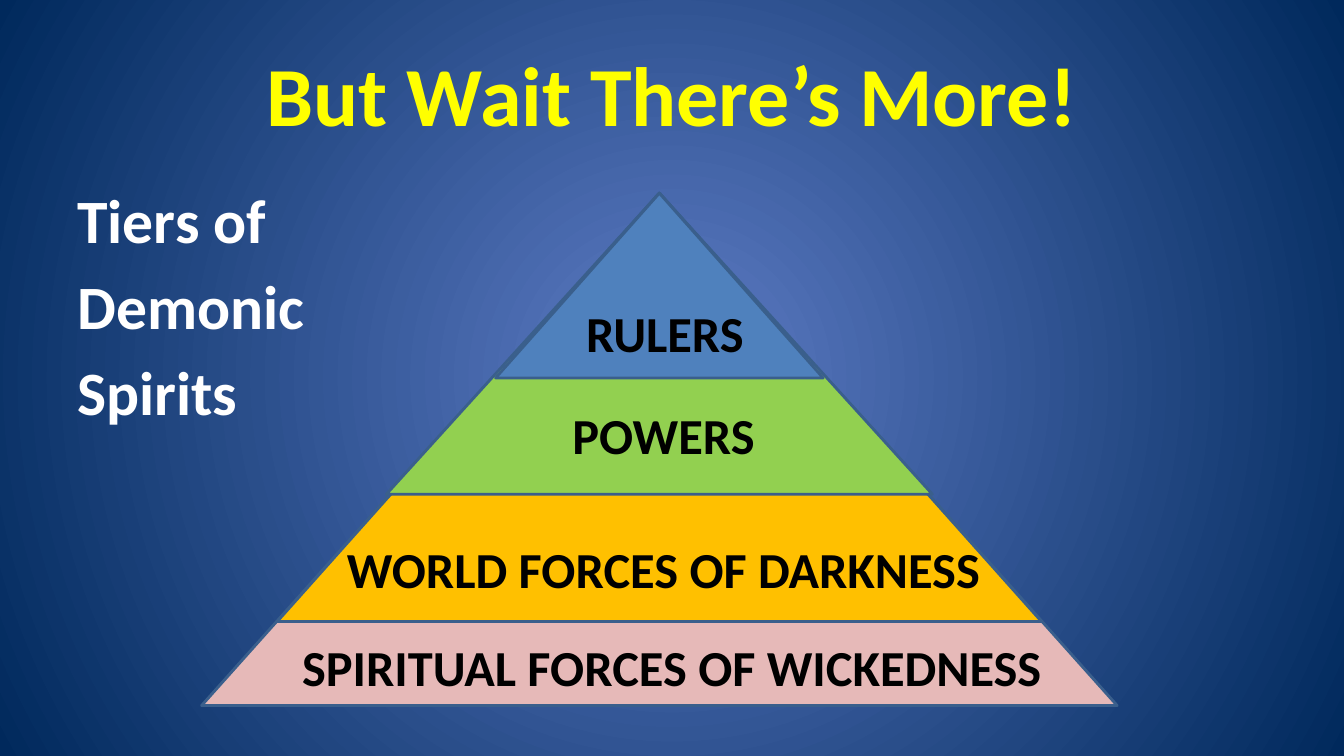
from dataclasses import dataclass

from lxml import etree
from pptx import Presentation
from pptx.dml.color import RGBColor
from pptx.enum.shapes import MSO_SHAPE
from pptx.enum.text import MSO_ANCHOR, MSO_AUTO_SIZE, PP_ALIGN
from pptx.oxml.ns import qn
from pptx.util import Pt

TRIANGLE = MSO_SHAPE.ISOSCELES_TRIANGLE
CENTER = PP_ALIGN.CENTER
LEFT = PP_ALIGN.LEFT
MIDDLE = MSO_ANCHOR.MIDDLE
TOP = MSO_ANCHOR.TOP
NO_FIT = MSO_AUTO_SIZE.NONE


@dataclass(frozen=True)
class Theme:
    font: str = "Calibri"
    glow: str = "5E7CC5"
    edge: str = "00295C"
    title: str = "FFFF00"
    body: str = "FFFFFF"
    label: str = "000000"
    line: str = "3A5F8C"
    title_size: int = 60
    body_size: int = 44
    label_size: int = 36
    line_width: int = 2


THEME = Theme()
APEX = (471, 138)
LABEL_HEIGHT = 51

# Base first: fill, triangle width and height, label, label left, top and width
TIERS = [
    ("E6B9B8", 654, 366, "SPIRITUAL FORCES OF WICKEDNESS", 120, 451, 720),
    ("FFC000", 546, 306, "WORLD FORCES OF DARKNESS", 114, 381, 720),
    ("92D050", 390, 215, "POWERS", 390, 285, 168),
    ("4F81BD", 234, 132, "RULERS", 394, 212.4, 162),
]


def rgb(code):
    return RGBColor.from_string(code)


def apply(target, values):
    for name, value in values.items():
        setattr(target, name, value)


def box(left, top, width, height):
    return {"left": Pt(left), "top": Pt(top),
            "width": Pt(width), "height": Pt(height)}


def write(shape, lines, size, color, align, anchor):
    frame = shape.text_frame
    frame.text = "\n".join(lines)
    apply(frame, {"word_wrap": True, "auto_size": NO_FIT,
                  "vertical_anchor": anchor})
    for para in frame.paragraphs:
        para.alignment = align
        font = para.runs[0].font
        apply(font, {"name": THEME.font, "size": Pt(size), "bold": True})
        font.color.rgb = rgb(color)


def paint(slide):
    """Fill the background with a gradient that spreads from the centre."""
    fill = slide.background.fill
    fill.gradient()
    for stop, code in zip(fill.gradient_stops, (THEME.glow, THEME.edge)):
        stop.color.rgb = rgb(code)
    grad = slide.background._cSld.find(".//" + qn("a:gradFill"))
    grad.remove(grad.find(qn("a:lin")))
    round_path = etree.SubElement(grad, qn("a:path"), {"path": "circle"})
    half = dict.fromkeys("ltrb", "50000")
    etree.SubElement(round_path, qn("a:fillToRect"), half)


def add_title(slide, text):
    title = slide.shapes.title
    apply(title, box(48, 21.6, 864, 90))
    write(title, [text], THEME.title_size, THEME.title, CENTER, MIDDLE)


def add_body(slide, lines):
    body = slide.placeholders[1]
    apply(body, box(48, 126, 864, 356.4))
    write(body, lines, THEME.body_size, THEME.body, LEFT, TOP)
    for para in body.text_frame.paragraphs:
        etree.SubElement(para._p.get_or_add_pPr(), qn("a:buNone"))


def add_tier(slide, color, width, height):
    """Draw a triangle that hangs from the shared apex."""
    left, top = APEX[0] - width / 2, APEX[1]
    place = box(left, top, width, height)
    tier = slide.shapes.add_shape(TRIANGLE, **place)
    tier.shadow.inherit = False
    tier.fill.solid()
    tier.fill.fore_color.rgb = rgb(color)
    tier.line.color.rgb = rgb(THEME.line)
    tier.line.width = Pt(THEME.line_width)


def add_label(slide, text, left, top, width):
    place = box(left, top, width, LABEL_HEIGHT)
    label = slide.shapes.add_textbox(**place)
    write(label, [text], THEME.label_size, THEME.label, CENTER, TOP)


def main():
    deck = Presentation()
    apply(deck, {"slide_width": Pt(960), "slide_height": Pt(540)})
    slide = deck.slides.add_slide(deck.slide_layouts[1])
    paint(slide)
    add_title(slide, "But Wait There’s More!")
    add_body(slide, ["Tiers of", "Demonic", "Spirits"])
    for color, width, height, *_ in TIERS:
        add_tier(slide, color, width, height)
    for *_, text, left, top, width in TIERS:
        add_label(slide, text, left, top, width)
    deck.save("out.pptx")


if __name__ == "__main__":
    main()
